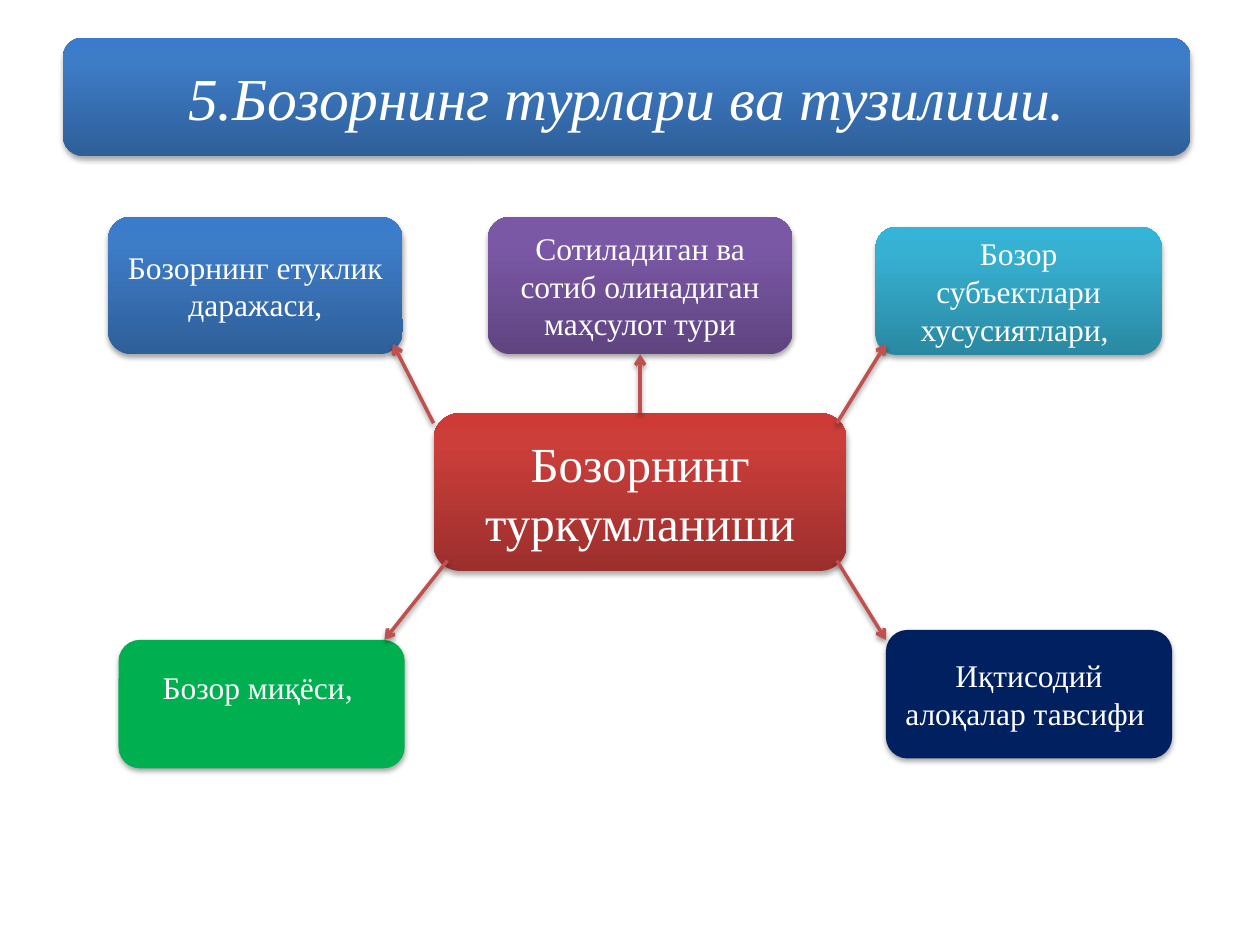
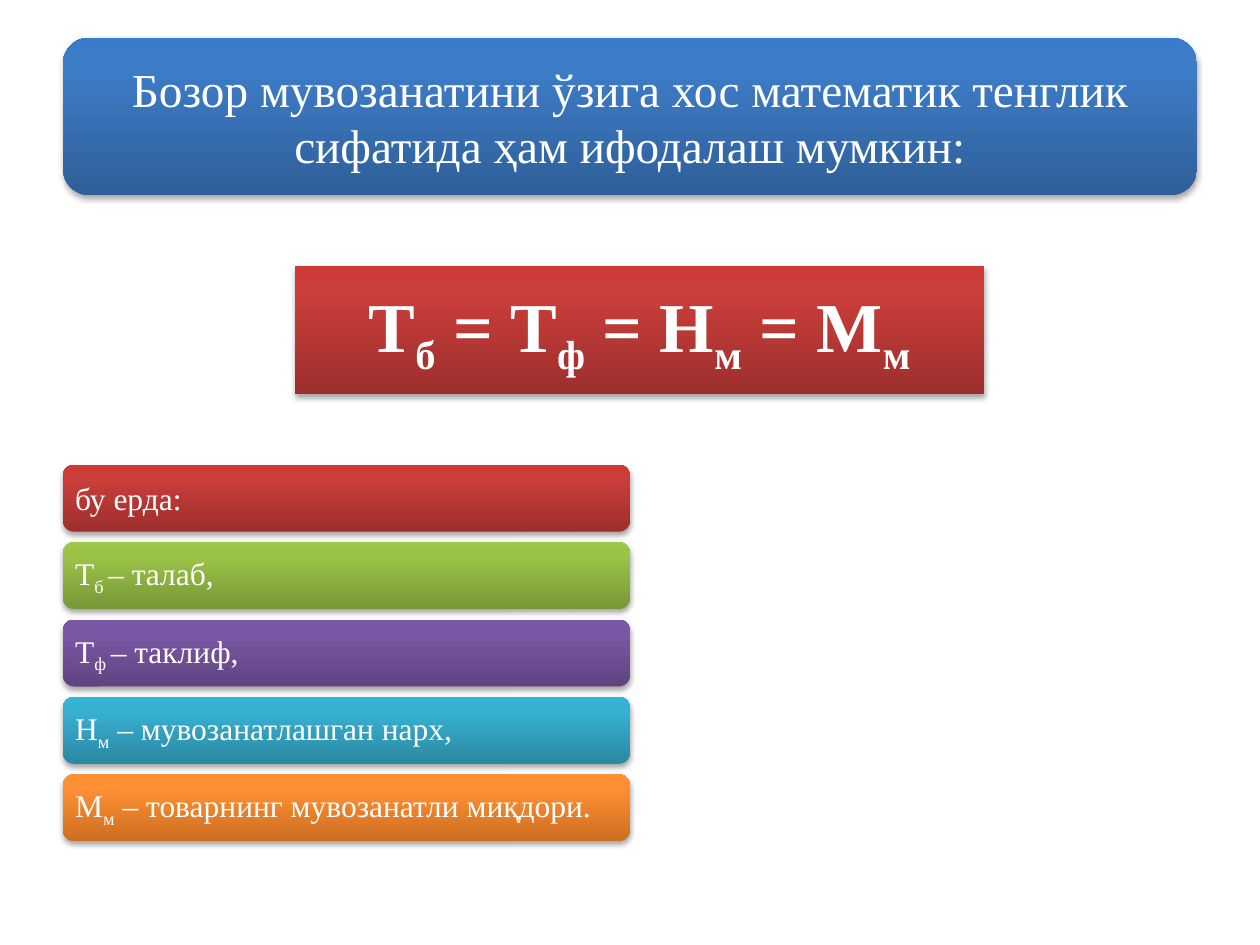
from copy import deepcopy
from dataclasses import dataclass

from lxml import etree
from pptx import Presentation
from pptx.dml.color import RGBColor
from pptx.enum.shapes import MSO_CONNECTOR, MSO_SHAPE
from pptx.enum.text import MSO_ANCHOR, MSO_AUTO_SIZE, PP_ALIGN
from pptx.oxml.ns import qn
from pptx.shapes.autoshape import Shape
from pptx.shapes.connector import Connector
from pptx.slide import Slide
from pptx.util import Cm, Pt

ROUNDED = MSO_SHAPE.ROUNDED_RECTANGLE
RECTANGLE = MSO_SHAPE.RECTANGLE
STRAIGHT = MSO_CONNECTOR.STRAIGHT
LEFT, CENTER = PP_ALIGN.LEFT, PP_ALIGN.CENTER
MIDDLE = MSO_ANCHOR.MIDDLE
NO_AUTOFIT = MSO_AUTO_SIZE.NONE
TOP_SIDE, BOTTOM_SIDE = 0, 2
TITLE_ONLY = 5


@dataclass(frozen=True)
class Theme:
    font: str = "Times New Roman"
    text: str = "FFFFFF"
    arrow: str = "C0504D"
    shadow: str = "000000"
    blue: tuple[str, ...] = ("2F5F99", "3D7CC7", "3A7CCB")
    red: tuple[str, ...] = ("9C2F2D", "CB3E3A", "CE3B37")
    lime: tuple[str, ...] = ("779737", "9BC348", "9DC746")
    purple: tuple[str, ...] = ("5F4480", "7B58A6", "7C57A8")
    teal: tuple[str, ...] = ("2A88A2", "37B1D2", "34B4D6")
    orange: tuple[str, ...] = ("CC6E20", "FF9034", "FF9136")
    navy: tuple[str, ...] = ("002060",)
    green: tuple[str, ...] = ("00B050",)
    stops: tuple[float, ...] = (0, 0.8, 1)
    body_size: int = 18
    long_title_size: int = 27
    hub_size: int = 28
    title_size: int = 34
    formula_size: int = 40


THEME = Theme()


@dataclass(frozen=True)
class Area:
    left: float
    top: float
    width: float
    height: float


@dataclass(frozen=True)
class TextStyle:
    size: int = THEME.body_size
    align: PP_ALIGN = CENTER
    bold: bool = False
    italic: bool = False
    inset_x: float = 0.25
    inset_top: float = 0.13
    inset_bottom: float = 0.13


@dataclass(frozen=True)
class Card:
    """Spans alternate between normal text and subscript."""
    area: Area
    colors: tuple[str, ...]
    spans: tuple[str, ...] = ()
    style: TextStyle = TextStyle()
    shape: MSO_SHAPE = ROUNDED


@dataclass(frozen=True)
class Arrow:
    start: tuple[float, float]
    end: tuple[float, float]


CARD_TEXT = TextStyle()
RAISED_TEXT = TextStyle(inset_bottom=0.82)
HUB_TEXT = TextStyle(size=THEME.hub_size)
FORMULA_TEXT = TextStyle(size=THEME.formula_size, bold=True)
ROW_TEXT = TextStyle(align=LEFT, inset_x=0.18, inset_top=0.18, inset_bottom=0.18)
TITLE_TEXT = TextStyle(THEME.title_size, italic=True, inset_x=0.36,
                       inset_top=0.36, inset_bottom=0.36)
LONG_TITLE_TEXT = TextStyle(THEME.long_title_size, inset_x=0.28,
                            inset_top=0.28, inset_bottom=0.28)

HUB = Card(Area(8.74, 8.33, 8.33, 3.18), THEME.red,
           ("Бозорнинг туркумланиши",), HUB_TEXT)
PRODUCT = Card(Area(9.83, 4.37, 6.15, 2.77), THEME.purple,
               ("Сотиладиган ва сотиб олинадиган маҳсулот тури",))
CRITERIA = (
    Card(Area(2.18, 4.37, 5.94, 2.77), THEME.blue,
         ("Бозорнинг етуклик даражаси,",)),
    Card(Area(17.86, 12.7, 5.77, 2.59), THEME.navy,
         ("Иқтисодий алоқалар тавсифи ",)),
    Card(Area(2.39, 12.9, 5.77, 2.59), THEME.green,
         ("Бозор миқёси, ",), RAISED_TEXT),
    Card(Area(17.65, 4.57, 5.77, 2.59), THEME.teal,
         ("Бозор субъектлари хусусиятлари, ",)),
)
CORNER_ARROWS = (
    Arrow((8.74, 8.53), (7.92, 6.93)),
    Arrow((16.87, 8.53), (17.86, 6.93)),
    Arrow((9.02, 11.3), (7.75, 12.9)),
    Arrow((16.87, 11.3), (17.86, 12.9)),
)
FORMULA = Card(Area(5.95, 5.36, 13.89, 2.59), THEME.red,
               ("Т", "б", " = Т", "ф", " = Н", "м", " = М", "м"),
               FORMULA_TEXT, RECTANGLE)
LEGEND = (
    (THEME.red, ("бу ерда:",)),
    (THEME.lime, ("Т", "б ", "– талаб,")),
    (THEME.purple, ("Т", "ф ", "– таклиф,")),
    (THEME.teal, ("Н", "м", " – мувозанатлашган нарх,")),
    (THEME.orange, ("М", "м", " – товарнинг мувозанатли миқдори.")),
)
LEGEND_TOP, LEGEND_STEP = 9.37, 1.56


def place(box: Shape, area: Area) -> None:
    box.left, box.top = Cm(area.left), Cm(area.top)
    box.width, box.height = Cm(area.width), Cm(area.height)


def paint(box: Shape, colors: tuple[str, ...]) -> None:
    if len(colors) == 1:
        box.fill.solid()
        box.fill.fore_color.rgb = RGBColor.from_string(colors[0])
        return
    box.fill.gradient()
    box.fill.gradient_angle = 90
    stop_list = box._element.spPr.find(".//" + qn("a:gsLst"))
    stop_list.append(deepcopy(stop_list[0]))
    for stop, position, color in zip(box.fill.gradient_stops, THEME.stops, colors):
        stop.position = position
        stop.color.rgb = RGBColor.from_string(color)


def add_shadow(effects: etree._Element, distance: float, opacity: int) -> None:
    shadow = etree.SubElement(effects, qn("a:outerShdw"), blurRad=str(Pt(3.1)),
                              dist=str(Pt(distance)), dir="5400000", rotWithShape="0")
    color = etree.SubElement(shadow, qn("a:srgbClr"), val=THEME.shadow)
    etree.SubElement(color, qn("a:alpha"), val=str(opacity * 1000))


def write(box: Shape, spans: tuple[str, ...], style: TextStyle) -> None:
    frame = box.text_frame
    frame.word_wrap = True
    frame.auto_size = NO_AUTOFIT
    frame.vertical_anchor = MIDDLE
    frame.margin_left = frame.margin_right = Cm(style.inset_x)
    frame.margin_top, frame.margin_bottom = Cm(style.inset_top), Cm(style.inset_bottom)
    para = frame.paragraphs[0]
    para.alignment = style.align
    for index, text in enumerate(spans):
        span = para.add_run()
        span.text = text
        span.font.name = THEME.font
        span.font.size = Pt(style.size)
        span.font.bold = style.bold
        span.font.italic = style.italic
        span.font.color.rgb = RGBColor.from_string(THEME.text)
        if index % 2:
            span._r.get_or_add_rPr().set("baseline", "-25000")


def add_card(page: Slide, card: Card) -> Shape:
    box = page.shapes.add_shape(card.shape, 0, 0, 0, 0)
    place(box, card.area)
    paint(box, card.colors)
    box.line.fill.background()
    box.shadow.inherit = False
    add_shadow(box._element.spPr.find(qn("a:effectLst")), 1.8, 35)
    if card.spans:
        write(box, card.spans, card.style)
    return box


def add_arrow(page: Slide, arrow: Arrow) -> Connector:
    line = page.shapes.add_connector(STRAIGHT, *map(Cm, arrow.start + arrow.end))
    line.line.color.rgb = RGBColor.from_string(THEME.arrow)
    line.line.width = Pt(2)
    properties = line._element.spPr
    etree.SubElement(properties.find(qn("a:ln")), qn("a:tailEnd"), type="arrow")
    add_shadow(etree.SubElement(properties, qn("a:effectLst")), 1.6, 38)
    return line


def add_page(deck: Presentation, title: str, area: Area, style: TextStyle) -> Slide:
    page = deck.slides.add_slide(deck.slide_layouts[TITLE_ONLY])
    add_card(page, Card(area, THEME.blue))
    heading = page.shapes.title
    place(heading, area)
    write(heading, (title,), style)
    page.shapes._spTree.append(heading._element)
    return page


def build_types_page(deck: Presentation) -> None:
    page = add_page(deck, "5.Бозорнинг турлари ва тузилиши.",
                    Area(1.27, 0.76, 22.73, 2.39), TITLE_TEXT)
    hub = add_card(page, HUB)
    product = add_card(page, PRODUCT)
    for card in CRITERIA:
        add_card(page, card)
    upward = add_arrow(page, Arrow((12.9, 8.33), (12.9, 7.14)))
    upward.begin_connect(hub, TOP_SIDE)
    upward.end_connect(product, BOTTOM_SIDE)
    for arrow in CORNER_ARROWS:
        add_arrow(page, arrow)


def build_balance_page(deck: Presentation) -> None:
    page = add_page(
        deck,
        "Бозор мувозанатини ўзига хос математик тенглик сифатида ҳам ифодалаш мумкин:",
        Area(1.27, 0.76, 22.86, 3.18), LONG_TITLE_TEXT)
    for row, (colors, spans) in enumerate(LEGEND):
        area = Area(1.27, LEGEND_TOP + row * LEGEND_STEP, 11.43, 1.35)
        add_card(page, Card(area, colors, spans, ROW_TEXT))
    add_card(page, FORMULA)


def main() -> None:
    deck = Presentation()
    deck.slide_width, deck.slide_height = Cm(25.4), Cm(19.05)
    build_types_page(deck)
    build_balance_page(deck)
    deck.save("out.pptx")


if __name__ == "__main__":
    main()
